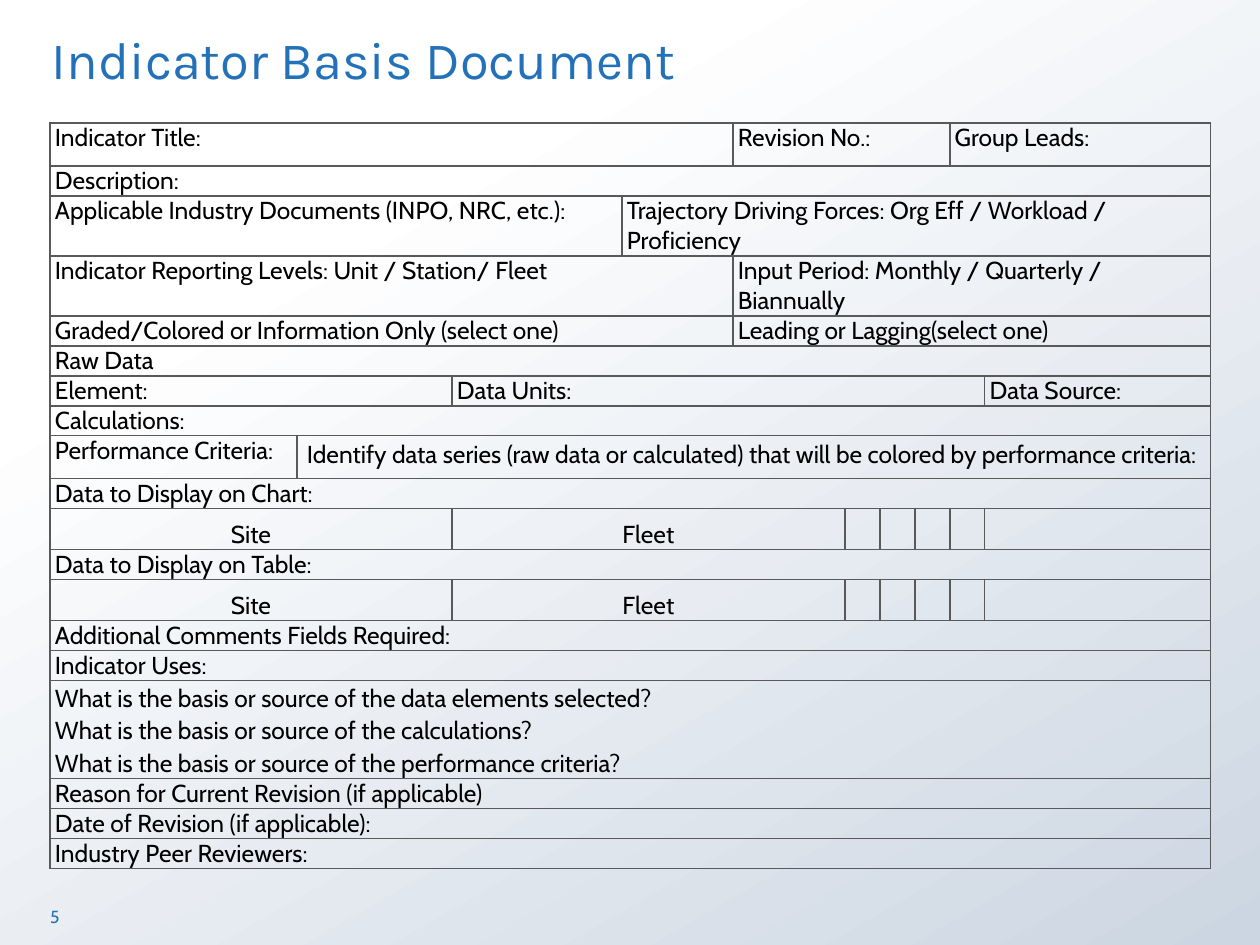
from dataclasses import dataclass

from lxml import etree
from pptx import Presentation
from pptx.dml.color import RGBColor
from pptx.enum.text import MSO_ANCHOR, PP_ALIGN
from pptx.oxml.ns import qn
from pptx.util import Emu, Pt

TOP, BOTTOM = MSO_ANCHOR.TOP, MSO_ANCHOR.BOTTOM
LEFT, CENTER = PP_ALIGN.LEFT, PP_ALIGN.CENTER
EMU_PER_PX = 914400 / 126


@dataclass(frozen=True)
class Theme:
    title_font: str = "Karla"
    body_font: str = "Cabin"
    blue: str = "2372B9"
    black: str = "000000"
    rule: str = "595959"
    light: str = "FFFFFF"
    shade: str = "CCD6E2"
    title_size: int = 30
    body_size: int = 14
    number_size: int = 10


@dataclass(frozen=True)
class CellStyle:
    left: int = 5
    right: int = 5
    after: int = 0
    spacing: float = 1.0
    align: int = LEFT
    anchor: int = TOP


THEME = Theme()
LABEL = CellStyle(after=3)
PLAIN = CellStyle()
QUESTIONS = CellStyle(spacing=1.1)
CRITERIA = CellStyle(left=10, spacing=1.15)
SITE = CellStyle(9, 9, spacing=1.1, align=CENTER, anchor=BOTTOM)
FLEET = CellStyle(9, 9, spacing=1.15, align=CENTER, anchor=BOTTOM)
EMPTY = CellStyle(0, 0)

COLUMNS = [247, 155, 170, 111, 112, 35, 35, 35, 35, 226]
SITE_FLEET = [(2, "Site", SITE), (3, "Fleet", FLEET)] + [(1, "", EMPTY)] * 5


def full_row(text, height=30, style=LABEL):
    return height, [(len(COLUMNS), text, style)]


ROWS = [
    (43, [(4, "Indicator Title:", LABEL), (4, "Revision No.:", LABEL),
          (2, "Group Leads:", LABEL)]),
    full_row("Description:"),
    (60, [(3, "Applicable Industry Documents (INPO, NRC, etc.):", PLAIN),
          (7, "Trajectory Driving Forces: Org Eff / Workload / Proficiency", LABEL)]),
    (60, [(4, "Indicator Reporting Levels: Unit / Station/ Fleet", LABEL),
          (6, "Input Period: Monthly / Quarterly / Biannually", LABEL)]),
    (30, [(4, "Graded/Colored or Information Only (select one)", LABEL),
          (6, "Leading or Lagging(select one)", LABEL)]),
    full_row("Raw Data"),
    (30, [(2, "Element:", PLAIN), (7, "Data Units:", PLAIN),
          (1, "Data Source:", PLAIN)]),
    full_row("Calculations:"),
    (43, [(1, "Performance Criteria:", LABEL),
          (9, "Identify data series (raw data or calculated) that will be "
              "colored by performance criteria:", CRITERIA)]),
    full_row("Data to Display on Chart:"),
    (41, SITE_FLEET),
    full_row("Data to Display on Table:"),
    (41, SITE_FLEET),
    full_row("Additional Comments Fields Required:"),
    full_row("Indicator Uses:"),
    full_row("What is the basis or source of the data elements selected?\n"
             "What is the basis or source of the calculations?\n"
             "What is the basis or source of the performance criteria?",
             98, QUESTIONS),
    full_row("Reason for Current Revision (if applicable)"),
    full_row("Date of Revision (if applicable):"),
    full_row("Industry Peer Reviewers:"),
]


def px(length):
    return Emu(round(length * EMU_PER_PX))


def set_margins(item, left=0, right=0):
    item.margin_left, item.margin_right = px(left), px(right)
    item.margin_top = item.margin_bottom = 0


def format_runs(para, font, size, color):
    for span in para.runs:
        span.font.name = font
        span.font.size = Pt(size)
        span.font.color.rgb = RGBColor.from_string(color)


def paint_background(page):
    fill = page.background.fill
    fill.gradient()
    fill.gradient_angle = 300
    stops = [(0.25, THEME.light), (1.0, THEME.shade)]
    for stop, (position, color) in zip(fill.gradient_stops, stops):
        stop.position = position
        stop.color.rgb = RGBColor.from_string(color)


def set_title(page, text):
    title = page.shapes.title
    title.left, title.top, title.width, title.height = map(px, (52, 28, 1159, 62))
    frame = title.text_frame
    frame.text = text
    frame.word_wrap = True
    frame.vertical_anchor = BOTTOM
    set_margins(frame)
    para = frame.paragraphs[0]
    para.alignment = LEFT
    para.line_spacing = Pt(32)
    format_runs(para, THEME.title_font, THEME.title_size, THEME.blue)


def add_page_number(page, text):
    box = page.shapes.add_textbox(*map(px, (50, 906, 68, 29)))
    frame = box.text_frame
    frame.text = text
    frame.word_wrap = True
    set_margins(frame)
    format_runs(frame.paragraphs[0], THEME.body_font, THEME.number_size, THEME.blue)


def add_borders(cell):
    properties = cell._tc.get_or_add_tcPr()
    for index, side in enumerate(("a:lnL", "a:lnR", "a:lnT", "a:lnB")):
        line = etree.Element(qn(side), w=str(Pt(1)))
        fill = etree.SubElement(line, qn("a:solidFill"))
        etree.SubElement(fill, qn("a:srgbClr"), val=THEME.rule)
        properties.insert(index, line)


def fill_cell(cell, text, style):
    cell.text_frame.text = text
    cell.vertical_anchor = style.anchor
    set_margins(cell, style.left, style.right)
    for para in cell.text_frame.paragraphs:
        para.alignment = style.align
        para.line_spacing = style.spacing
        para.space_after = Pt(style.after)
        format_runs(para, THEME.body_font, THEME.body_size, THEME.black)


def add_form_table(page):
    heights = [height for height, _ in ROWS]
    frame = page.shapes.add_table(
        len(ROWS), len(COLUMNS), px(50), px(123), px(sum(COLUMNS)), px(sum(heights)))
    table = frame.table
    table.first_row = table.horz_banding = False
    for column, width in zip(table.columns, COLUMNS):
        column.width = px(width)
    for row, height in zip(table.rows, heights):
        row.height = px(height)
    for cell in table.iter_cells():
        cell.fill.background()
        add_borders(cell)
    for row_index, (_, entries) in enumerate(ROWS):
        start = 0
        for span, text, style in entries:
            cell = table.cell(row_index, start)
            if span > 1:
                cell.merge(table.cell(row_index, start + span - 1))
            fill_cell(cell, text, style)
            start += span


def main():
    deck = Presentation()
    deck.slide_width, deck.slide_height = px(1260), px(945)
    page = deck.slides.add_slide(deck.slide_layouts[5])
    paint_background(page)
    set_title(page, "Indicator Basis Document")
    add_page_number(page, "5")
    add_form_table(page)
    deck.save("out.pptx")


if __name__ == "__main__":
    main()
